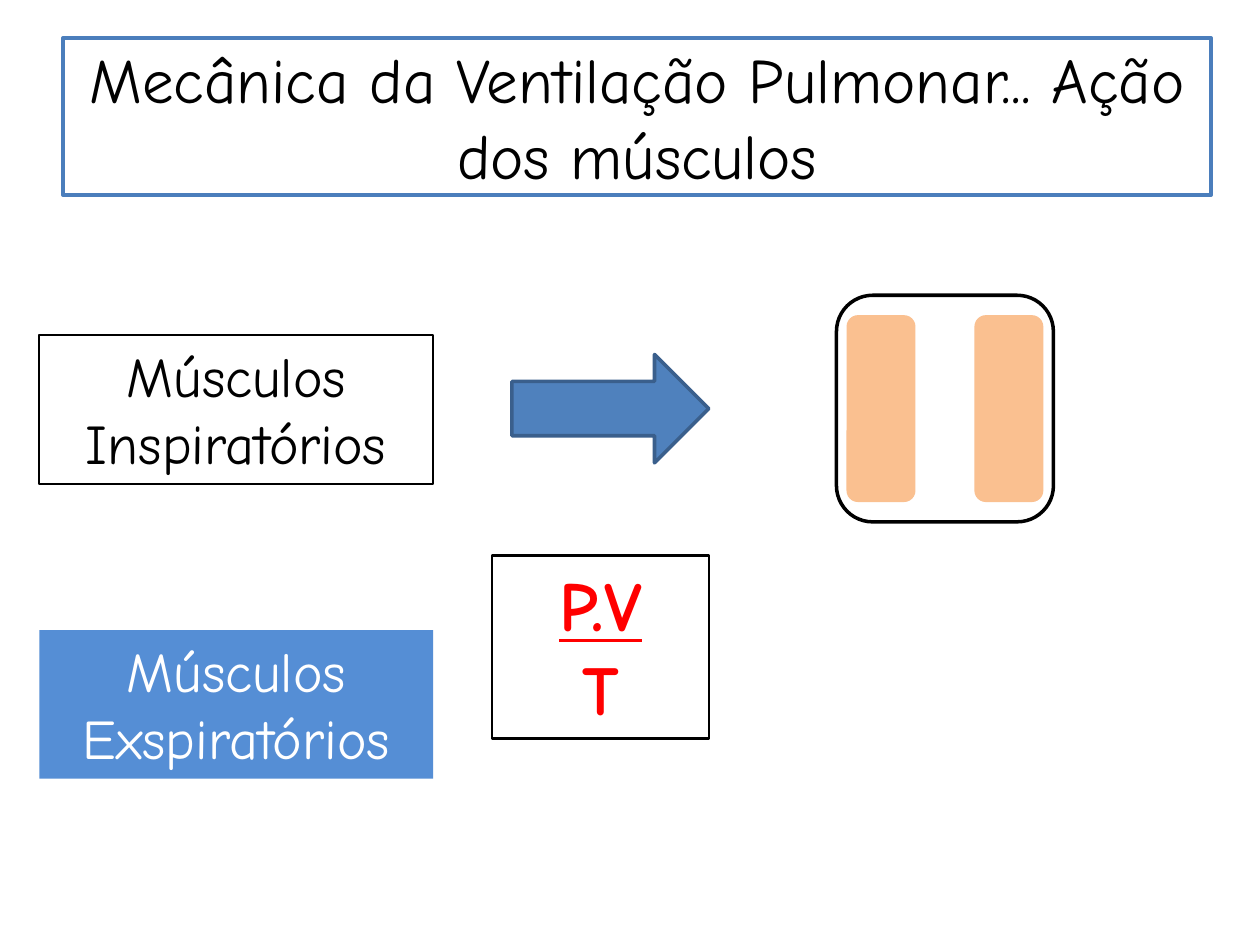
from dataclasses import dataclass
from typing import Optional

from pptx import Presentation
from pptx.dml.color import RGBColor
from pptx.enum.shapes import MSO_SHAPE
from pptx.enum.text import MSO_ANCHOR, MSO_AUTO_SIZE, PP_ALIGN
from pptx.util import Pt

RECTANGLE = MSO_SHAPE.RECTANGLE
ROUNDED = MSO_SHAPE.ROUNDED_RECTANGLE
RIGHT_ARROW = MSO_SHAPE.RIGHT_ARROW
CENTER = PP_ALIGN.CENTER
TOP, MIDDLE = MSO_ANCHOR.TOP, MSO_ANCHOR.MIDDLE
NO_AUTOFIT = MSO_AUTO_SIZE.NONE
GROW_TO_TEXT = MSO_AUTO_SIZE.SHAPE_TO_FIT_TEXT


@dataclass(frozen=True)
class Theme:
    font: str = "Comic Neue"
    title_size: float = 36
    label_size: float = 32
    formula_size: float = 40
    black: str = "000000"
    white: str = "FFFFFF"
    red: str = "FF0000"
    title_line: str = "4B7EBC"
    label_fill: str = "558ED5"
    arrow_fill: str = "4F81BD"
    arrow_line: str = "3A5F8C"
    lung: str = "FAC090"


@dataclass(frozen=True)
class Box:
    left: float
    top: float
    width: float
    height: float
    fill: Optional[str] = None
    line: Optional[str] = None
    line_width: float = 1


THEME = Theme()


def style_box(shape, box: Box) -> None:
    """Apply the fill and outline of a box."""
    if box.fill:
        shape.fill.solid()
        shape.fill.fore_color.rgb = RGBColor.from_string(box.fill)
    else:
        shape.fill.background()
    if box.line:
        shape.line.color.rgb = RGBColor.from_string(box.line)
        shape.line.width = Pt(box.line_width)
    else:
        shape.line.fill.background()


def add_box(slide, kind, box: Box):
    shape = slide.shapes.add_shape(
        kind, Pt(box.left), Pt(box.top), Pt(box.width), Pt(box.height))
    shape.shadow.inherit = False
    style_box(shape, box)
    return shape


def write_text(shape, text: str, size: float, color: str,
               anchor=TOP, auto_size=GROW_TO_TEXT) -> None:
    """Write centred text, one paragraph for each line."""
    frame = shape.text_frame
    frame.text = text
    frame.word_wrap = True
    frame.auto_size = auto_size
    frame.vertical_anchor = anchor
    for paragraph in frame.paragraphs:
        paragraph.alignment = CENTER
        paragraph.font.name = THEME.font
        paragraph.font.size = Pt(size)
        paragraph.font.color.rgb = RGBColor.from_string(color)


def add_title(slide, text: str, box: Box) -> None:
    title = slide.shapes.title
    title.left, title.top = Pt(box.left), Pt(box.top)
    title.width, title.height = Pt(box.width), Pt(box.height)
    style_box(title, box)
    write_text(title, text, THEME.title_size, THEME.black, MIDDLE, NO_AUTOFIT)


def add_label(slide, text: str, color: str, box: Box) -> None:
    write_text(add_box(slide, RECTANGLE, box), text, THEME.label_size, color)


def add_formula(slide, box: Box) -> None:
    """Write P.V over T, with the underline as the fraction bar."""
    shape = add_box(slide, RECTANGLE, box)
    write_text(shape, "P.V\nT", THEME.formula_size, THEME.red)
    for paragraph in shape.text_frame.paragraphs:
        paragraph.font.bold = True
    shape.text_frame.paragraphs[0].font.underline = True


def add_chest(slide, chest: Box, lung_width: float, lung_height: float,
              margin: float) -> None:
    """Draw the chest outline with a lung at each side."""
    add_box(slide, ROUNDED, chest)
    top = chest.top + (chest.height - lung_height) / 2
    right = chest.left + chest.width - margin - lung_width
    for left in (chest.left + margin, right):
        add_box(slide, ROUNDED,
                Box(left, top, lung_width, lung_height, THEME.lung))


def main() -> None:
    presentation = Presentation()
    presentation.slide_width, presentation.slide_height = Pt(720), Pt(540)
    slide = presentation.slides.add_slide(presentation.slide_layouts[5])

    # Title
    add_title(slide, "Mecânica da Ventilação Pulmonar... Ação dos músculos",
              Box(36, 21.6, 656, 90, THEME.white, THEME.title_line, 2))

    # Muscle groups
    add_label(slide, "Músculos Inspiratórios", THEME.black,
              Box(22.5, 191.5, 225, 85, line=THEME.black))
    add_label(slide, "Músculos Exspiratórios", THEME.white,
              Box(22.5, 360, 225, 85, THEME.label_fill))

    # Arrow towards the chest
    add_box(slide, RIGHT_ARROW,
            Box(292.5, 202.5, 112.5, 62, THEME.arrow_fill, THEME.arrow_line, 2))

    # Gas law
    add_formula(slide, Box(281.25, 317.5, 124, 104.4,
                           line=THEME.black, line_width=1.5))

    # Chest and lungs
    add_chest(slide, Box(478, 168.75, 124, 129.5, line=THEME.black, line_width=2),
              lung_width=39.4, lung_height=106.8, margin=5.75)

    presentation.save("out.pptx")


if __name__ == "__main__":
    main()
